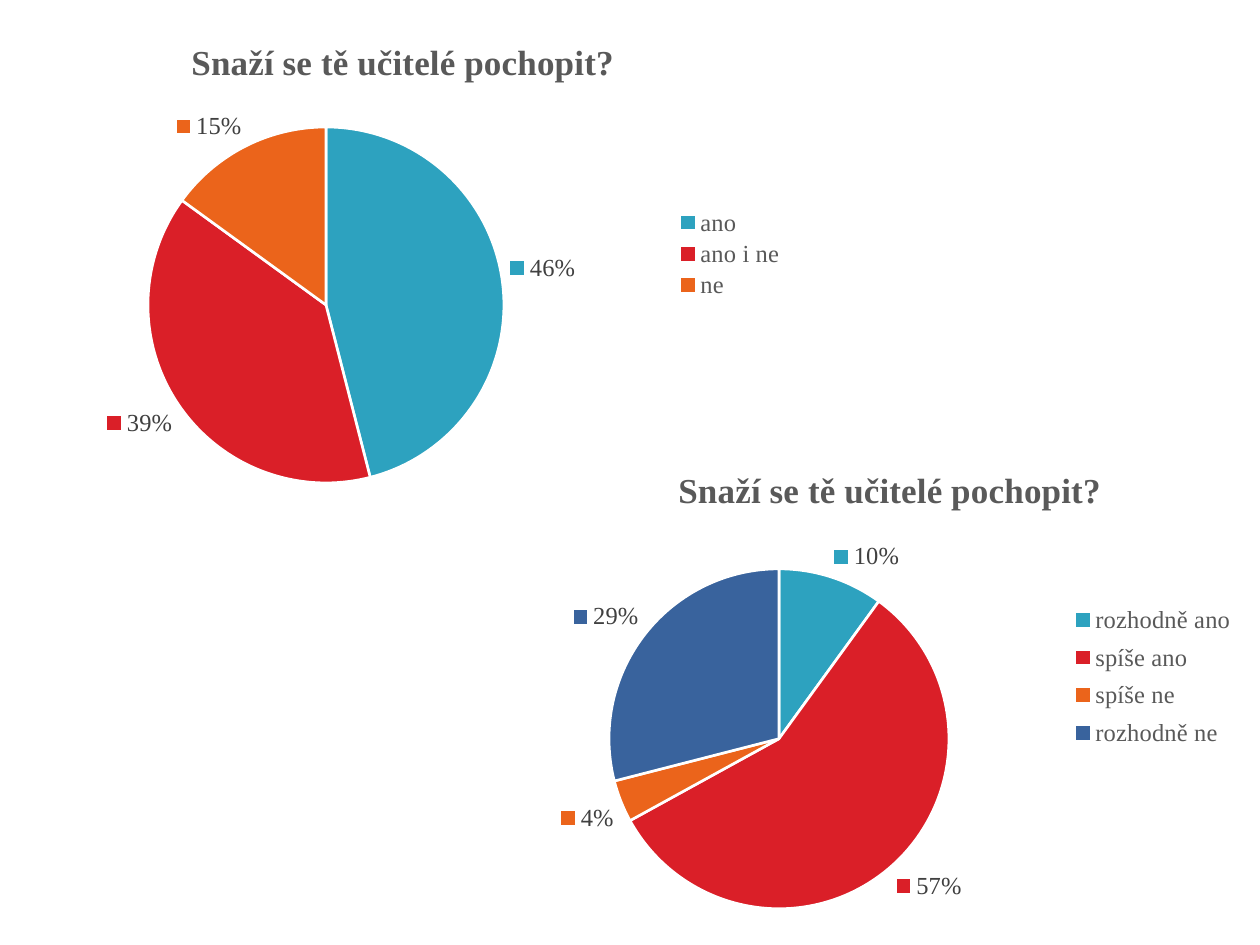
from dataclasses import dataclass

from lxml import etree
from pptx import Presentation
from pptx import util as u
from pptx.chart.data import CategoryChartData
from pptx.dml.color import RGBColor
from pptx.enum import chart as charts
from pptx.oxml.ns import qn

EMU_PER_PX = 914400 / 126
SLIDE_WIDTH, SLIDE_HEIGHT = 1260, 945
CHART_WIDTH, CHART_HEIGHT = 794, 496

WHITE = RGBColor(0xFF, 0xFF, 0xFF)
BLACK = RGBColor(0x00, 0x00, 0x00)
TEXT_GRAY = RGBColor(0x59, 0x59, 0x59)
LABEL_GRAY = RGBColor(0x40, 0x40, 0x40)
SLICE_COLORS = (
    RGBColor(0x2D, 0xA2, 0xBF),
    RGBColor(0xDA, 0x1F, 0x28),
    RGBColor(0xEB, 0x64, 0x1B),
    RGBColor(0x39, 0x63, 0x9D),
)
BODY_FONT = "Cambria"
TEXT_FONT = "Times New Roman"
TITLE = "Snaží se tě učitelé pochopit?"


@dataclass(frozen=True)
class PieSpec:
    """A pie chart; inner positions are px from the chart's top left corner."""
    left: int
    top: int
    answers: dict[str, int]
    title: tuple[int, int]
    pie: tuple[int, int, int, int]
    legend: tuple[int, int, int, int]


PIES = (
    PieSpec(
        466, 442,
        {"rozhodně ano": 10, "spíše ano": 57, "spíše ne": 4, "rozhodně ne": 29},
        title=(206, 19), pie=(143, 127, 340, 340), legend=(592, 154, 190, 161),
    ),
    PieSpec(
        0, 6,
        {"ano": 46, "ano i ne": 39, "ne": 15},
        title=(185, 27), pie=(148, 121, 356, 356), legend=(671, 199, 118, 98),
    ),
)


def px(length: int) -> u.Emu:
    return u.Emu(round(length * EMU_PER_PX))


def style_font(font, size: int, color: RGBColor, name: str = TEXT_FONT, bold: bool = False) -> None:
    font.size = u.Pt(size)
    font.name = name
    font.bold = bold
    font.color.rgb = color


def place(element, index: int, box: tuple[int, ...], inner: bool = False) -> None:
    """Give a chart part a manual layout, as fractions of the chart."""
    for old in element.findall(qn("c:layout")):
        element.remove(old)
    layout = etree.Element(qn("c:layout"))
    manual = etree.SubElement(layout, qn("c:manualLayout"))
    settings = [("layoutTarget", "inner")] if inner else []
    settings += [("xMode", "edge"), ("yMode", "edge")]
    for name, length, whole in zip("xywh", box, (CHART_WIDTH, CHART_HEIGHT) * 2):
        settings.append((name, f"{length / whole:.4f}"))
    for name, value in settings:
        etree.SubElement(manual, qn(f"c:{name}")).set("val", value)
    element.insert(index, layout)


def draw_pie(slide, spec: PieSpec) -> None:
    data = CategoryChartData(number_format="0")
    data.categories = list(spec.answers)
    data.add_series("Series 1", list(spec.answers.values()))
    chart = slide.shapes.add_chart(
        charts.XL_CHART_TYPE.PIE, px(spec.left), px(spec.top),
        px(CHART_WIDTH), px(CHART_HEIGHT), data,
    ).chart
    style_font(chart.font, 10, BLACK, BODY_FONT)

    # Title
    chart.has_title = True
    title = chart.chart_title
    paragraph = title.text_frame.paragraphs[0]
    paragraph.text = TITLE
    style_font(paragraph.runs[0].font, 20, TEXT_GRAY, bold=True)
    place(title._element, 1, spec.title)

    # Legend
    chart.has_legend = True
    legend = chart.legend
    legend.position = charts.XL_LEGEND_POSITION.RIGHT
    legend.include_in_layout = False
    style_font(legend.font, 14, TEXT_GRAY)
    place(legend._element, 1, spec.legend)

    # Slices
    plot = chart.plots[0]
    plot.vary_by_categories = True
    for index in range(len(spec.answers)):
        point = plot.series[0].points[index]
        point.format.fill.solid()
        point.format.fill.fore_color.rgb = SLICE_COLORS[index]
        point.format.line.color.rgb = WHITE
        point.format.line.width = u.Pt(1.5)
    place(chart._chartSpace.chart.plotArea, 0, spec.pie, inner=True)

    # Percentages with their legend keys
    labels = plot.series[0].data_labels
    labels.show_value = False
    labels.show_percentage = True
    labels.show_legend_key = True
    labels.number_format = "0%"
    labels.number_format_is_linked = False
    labels.position = charts.XL_LABEL_POSITION.OUTSIDE_END
    style_font(labels.font, 14, LABEL_GRAY)


def main() -> None:
    presentation = Presentation()
    presentation.slide_width = px(SLIDE_WIDTH)
    presentation.slide_height = px(SLIDE_HEIGHT)
    slide = presentation.slides.add_slide(presentation.slide_layouts[6])
    for spec in PIES:
        draw_pie(slide, spec)
    presentation.save("out.pptx")


if __name__ == "__main__":
    main()
